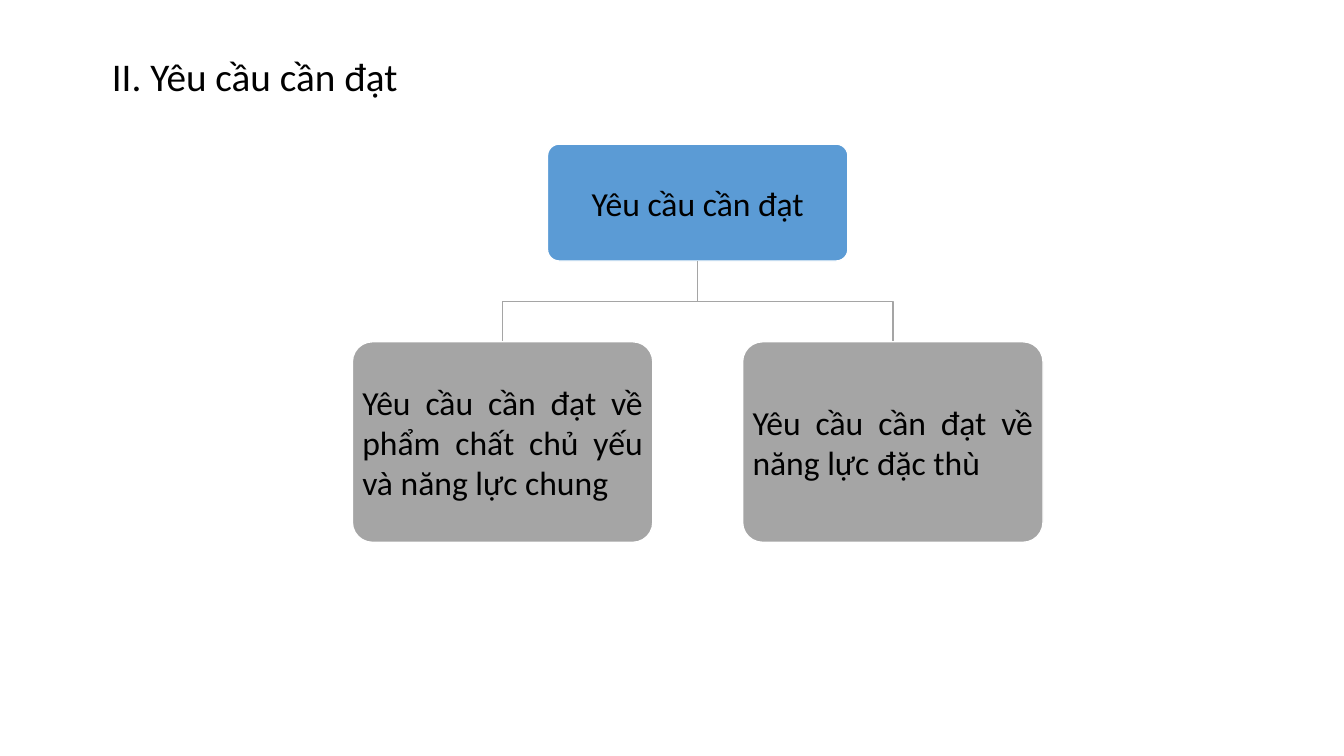
from pptx import Presentation
from pptx.dml.color import RGBColor
from pptx.enum.shapes import MSO_SHAPE
from pptx.enum.text import MSO_ANCHOR, MSO_AUTO_SIZE, PP_ALIGN
from pptx.util import Inches, Pt

COLORS = {"text": "000000", "root": "5B9BD5", "leaf": "A5A5A5", "edge": "FFFFFF"}
FONT = "Calibri"
MID = 6.92
BOX_W = 2.98
STEP = 1.935
ROOT_TOP, ROOT_H = 1.43, 1.16
LEAF_TOP, LEAF_H = 3.39, 1.99
LEAVES = [
    (-STEP, "Yêu cầu cần đạt về phẩm chất chủ yếu và năng lực chung"),
    (STEP, "Yêu cầu cần đạt về năng lực đặc thù"),
]


def color(name):
    return RGBColor.from_string(COLORS[name])


def style(para, size, align):
    para.alignment = align
    para.font.name = FONT
    para.font.size = Pt(size)
    para.font.color.rgb = color("text")


def add_title(slide, text):
    title = slide.shapes.title
    title.left, title.top = Inches(1.01), Inches(0.52)
    title.width, title.height = Inches(11.41), Inches(0.7)
    frame = title.text_frame
    frame.text = text
    frame.auto_size = MSO_AUTO_SIZE.NONE
    frame.vertical_anchor = MSO_ANCHOR.TOP
    para = frame.paragraphs[0]
    style(para, 28, PP_ALIGN.LEFT)
    para.line_spacing = 0.9


def add_box(slide, mid, top, height, text, fill, align):
    box = slide.shapes.add_shape(
        MSO_SHAPE.ROUNDED_RECTANGLE,
        Inches(mid - BOX_W / 2), Inches(top), Inches(BOX_W), Inches(height))
    box.adjustments[0] = 0.1
    box.shadow.inherit = False
    box.fill.solid()
    box.fill.fore_color.rgb = color(fill)
    box.line.color.rgb = color("edge")
    box.line.width = Pt(1)
    frame = box.text_frame
    frame.word_wrap = True
    frame.vertical_anchor = MSO_ANCHOR.MIDDLE
    frame.margin_left = frame.margin_right = Inches(0.04)
    frame.text = text
    style(frame.paragraphs[0], 24, align)


def add_branch(slide, start, end):
    """Draw an open elbow line that turns halfway down."""
    (x1, y1), (x2, y2) = start, end
    turn = (y1 + y2) / 2
    points = [(Inches(x), Inches(y)) for x, y in ((x1, turn), (x2, turn), end)]
    form = slide.shapes.build_freeform(Inches(x1), Inches(y1))
    form.add_line_segments(points, close=False)
    branch = form.convert_to_shape()
    branch.shadow.inherit = False
    branch.fill.background()
    branch.line.color.rgb = color("leaf")
    branch.line.width = Pt(1)


def main():
    deck = Presentation()
    deck.slide_width, deck.slide_height = Inches(13.33), Inches(7.5)
    slide = deck.slides.add_slide(deck.slide_layouts[5])
    add_title(slide, "II. Yêu cầu cần đạt")
    add_box(slide, MID, ROOT_TOP, ROOT_H, "Yêu cầu cần đạt", "root", PP_ALIGN.CENTER)
    for shift, text in LEAVES:
        mid = MID + shift
        add_branch(slide, (MID, ROOT_TOP + ROOT_H), (mid, LEAF_TOP))
        add_box(slide, mid, LEAF_TOP, LEAF_H, text, "leaf", PP_ALIGN.JUSTIFY)
    deck.save("out.pptx")


if __name__ == "__main__":
    main()
